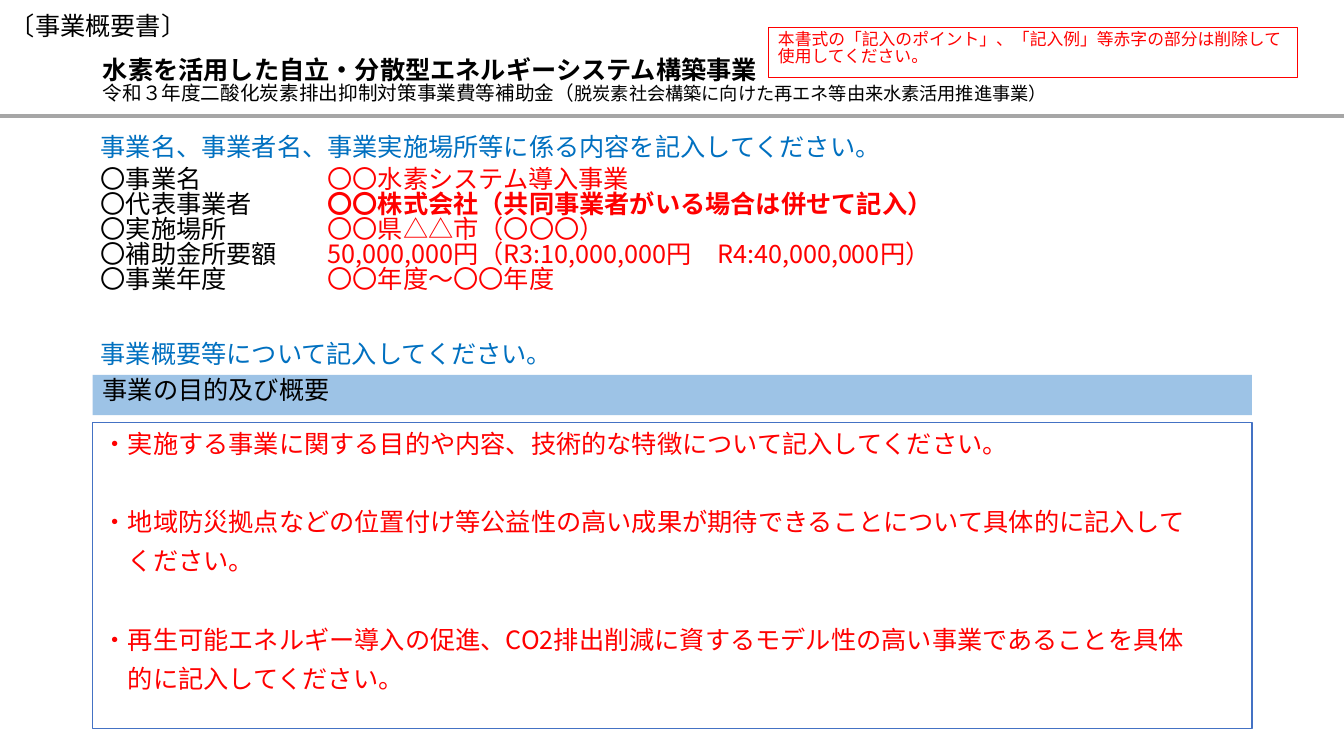
from dataclasses import dataclass

import lxml.etree
import pptx
import pptx.dml.color
import pptx.enum.shapes
import pptx.enum.text
import pptx.oxml.ns
import pptx.util

FONT = "Noto Sans CJK JP"
COLORS = {
    "ink": "000000", "example": "FF0000", "guide": "0070C0",
    "band": "9DC3E6", "frame": "4472C4", "rule": "A6A6A6",
}
COLUMNS, ROWS = 160, 90
WIDTH, HEIGHT = pptx.util.Inches(13.33), pptx.util.Inches(7.5)
TIGHT = 0.83
EM = pptx.util.Pt(18)


@dataclass
class Area:
    """A place on the grid, in columns and rows."""
    column: float
    row: float
    columns: float
    rows: float

    def lengths(self) -> tuple[int, int, int, int]:
        return (round(WIDTH * self.column / COLUMNS), round(HEIGHT * self.row / ROWS),
                round(WIDTH * self.columns / COLUMNS), round(HEIGHT * self.rows / ROWS))


@dataclass
class Panel:
    area: Area
    text: str = ""
    color: str = "ink"
    size: float = 18
    fill: str | None = None
    line: str | None = None
    weight: float = 1


@dataclass
class Detail:
    label: str
    example: str
    bold: bool = False


TITLE_AREA = Area(11.04, 5.88, 138, 7.68)
TITLE = "水素を活用した自立・分散型エネルギーシステム構築事業"
SUBSIDY = "令和３年度二酸化炭素排出抑制対策事業費等補助金（"
PROGRAM = "脱炭素社会構築に向けた再エネ等由来水素活用推進事業）"
RULE_ROW = 13.8

DETAILS_PANEL = Panel(Area(10.8, 19.44, 138, 19.44))
DETAILS = [
    Detail("〇事業名", "〇〇水素システム導入事業"),
    Detail("〇代表事業者", "〇〇株式会社（共同事業者がいる場合は併せて記入）", bold=True),
    Detail("〇実施場所", "〇〇県△△市（〇〇〇）"),
    Detail("〇補助金所要額", "50,000,000円（R3:10,000,000円　R4:40,000,000円）"),
    Detail("〇事業年度", "〇〇年度～〇〇年度"),
]

PURPOSE_PANEL = Panel(Area(11.04, 50.28, 138, 36.48), line="frame")
PURPOSES = [
    ["・実施する事業に関する目的や内容、技術的な特徴について記入してください。"],
    ["・地域防災拠点などの位置付け等公益性の高い成果が期待できることについて具体的に記入して",
     "ください。"],
    ["・再生可能エネルギー導入の促進、CO2排出削減に資するモデル性の高い事業であることを具体",
     "的に記入してください。"],
]

PANELS = [
    Panel(Area(11.04, 44.64, 138, 4.8), "事業の目的及び概要", fill="band"),
    Panel(Area(10.8, 15.6, 109.8, 4.8),
          "事業名、事業者名、事業実施場所等に係る内容を記入してください。", "guide"),
    Panel(Area(10.8, 40.32, 109.8, 4.8), "事業概要等について記入してください。", "guide"),
    Panel(Area(0, 1.2, 25.08, 4.8), "〔事業概要書〕"),
    Panel(Area(91.44, 3.24, 63, 6),
          "本書式の「記入のポイント」、「記入例」等赤字の部分は削除して使用してください。",
          "example", 12, line="example", weight=0.75),
]


def rgb(name: str) -> pptx.dml.color.RGBColor:
    return pptx.dml.color.RGBColor.from_string(COLORS[name])


def format_paragraph(para, size: float = 18, color: str = "ink", spacing=TIGHT) -> None:
    para.alignment = pptx.enum.text.PP_ALIGN.LEFT
    para.line_spacing = spacing
    para.font.size = pptx.util.Pt(size)
    para.font.color.rgb = rgb(color)
    para.font.name = FONT
    # East Asian letters take their typeface from a separate element
    defaults = para._p.pPr.find(pptx.oxml.ns.qn("a:defRPr"))
    lxml.etree.SubElement(defaults, pptx.oxml.ns.qn("a:ea"), typeface=FONT)


def indent_paragraph(para, left: int, first: int) -> None:
    properties = para._p.get_or_add_pPr()
    properties.set("marL", str(left))
    properties.set("indent", str(first))


def add_tab_stop(para, position: int) -> None:
    properties = para._p.get_or_add_pPr()
    stops = lxml.etree.SubElement(properties, pptx.oxml.ns.qn("a:tabLst"))
    lxml.etree.SubElement(stops, pptx.oxml.ns.qn("a:tab"), pos=str(position), algn="l")


def next_paragraph(frame, index: int):
    return frame.paragraphs[0] if index == 0 else frame.add_paragraph()


def add_panel(page, panel: Panel):
    """Draw a text box, or a rectangle if it has a fill or line."""
    if panel.fill or panel.line:
        box = page.shapes.add_shape(pptx.enum.shapes.MSO_SHAPE.RECTANGLE, *panel.area.lengths())
        box.shadow.inherit = False
    else:
        box = page.shapes.add_textbox(*panel.area.lengths())
    if panel.fill:
        box.fill.solid()
        box.fill.fore_color.rgb = rgb(panel.fill)
    else:
        box.fill.background()
    if panel.line:
        box.line.color.rgb = rgb(panel.line)
        box.line.width = pptx.util.Pt(panel.weight)
    else:
        box.line.fill.background()
    frame = box.text_frame
    frame.word_wrap = True
    frame.vertical_anchor = pptx.enum.text.MSO_ANCHOR.TOP
    if panel.text:
        frame.text = panel.text
        format_paragraph(frame.paragraphs[0], panel.size, panel.color)
    return frame


def add_title(page) -> None:
    box = page.shapes.title
    box.left, box.top, box.width, box.height = TITLE_AREA.lengths()
    frame = box.text_frame
    frame.word_wrap = True
    frame.auto_size = pptx.enum.text.MSO_AUTO_SIZE.NONE
    frame.vertical_anchor = pptx.enum.text.MSO_ANCHOR.MIDDLE
    para = frame.paragraphs[0]
    format_paragraph(para)
    for text, size in ((TITLE, 18), (SUBSIDY, 14), (PROGRAM, 13)):
        span = para.add_run()
        span.text = text
        span.font.size = pptx.util.Pt(size)
        span.font.bold = text == TITLE
        if text == TITLE:
            para.add_line_break()


def add_rule(page) -> None:
    height = round(HEIGHT * RULE_ROW / ROWS)
    rule = page.shapes.add_connector(
        pptx.enum.shapes.MSO_CONNECTOR.STRAIGHT, 0, height, WIDTH, height)
    rule.line.color.rgb = rgb("rule")
    rule.line.width = pptx.util.Pt(2.5)
    lxml.etree.SubElement(rule._element.spPr, pptx.oxml.ns.qn("a:effectLst"))


def add_details(page) -> None:
    frame = add_panel(page, DETAILS_PANEL)
    for index, detail in enumerate(DETAILS):
        para = next_paragraph(frame, index)
        add_tab_stop(para, 9 * EM)
        format_paragraph(para)
        para.add_run().text = detail.label + "\t"
        span = para.add_run()
        span.text = detail.example
        span.font.color.rgb = rgb("example")
        span.font.bold = detail.bold


def add_purposes(page) -> None:
    frame = add_panel(page, PURPOSE_PANEL)
    lines = [(text, row == 0) for item in PURPOSES for row, text in enumerate(item)]
    for index, (text, starts_item) in enumerate(lines):
        para = next_paragraph(frame, index)
        para.text = text
        format_paragraph(para, color="example", spacing=pptx.util.Pt(22))
        para.space_before = pptx.util.Pt(34 if starts_item and index else 6)
        indent_paragraph(para, EM, -EM if starts_item else 0)


def main() -> None:
    deck = pptx.Presentation()
    deck.slide_width, deck.slide_height = WIDTH, HEIGHT
    page = deck.slides.add_slide(deck.slide_layouts[5])
    # Heading, then the form's sections, then its labels and guidance
    add_title(page)
    add_rule(page)
    add_details(page)
    add_purposes(page)
    for panel in PANELS:
        add_panel(page, panel)
    deck.save("out.pptx")


if __name__ == "__main__":
    main()
